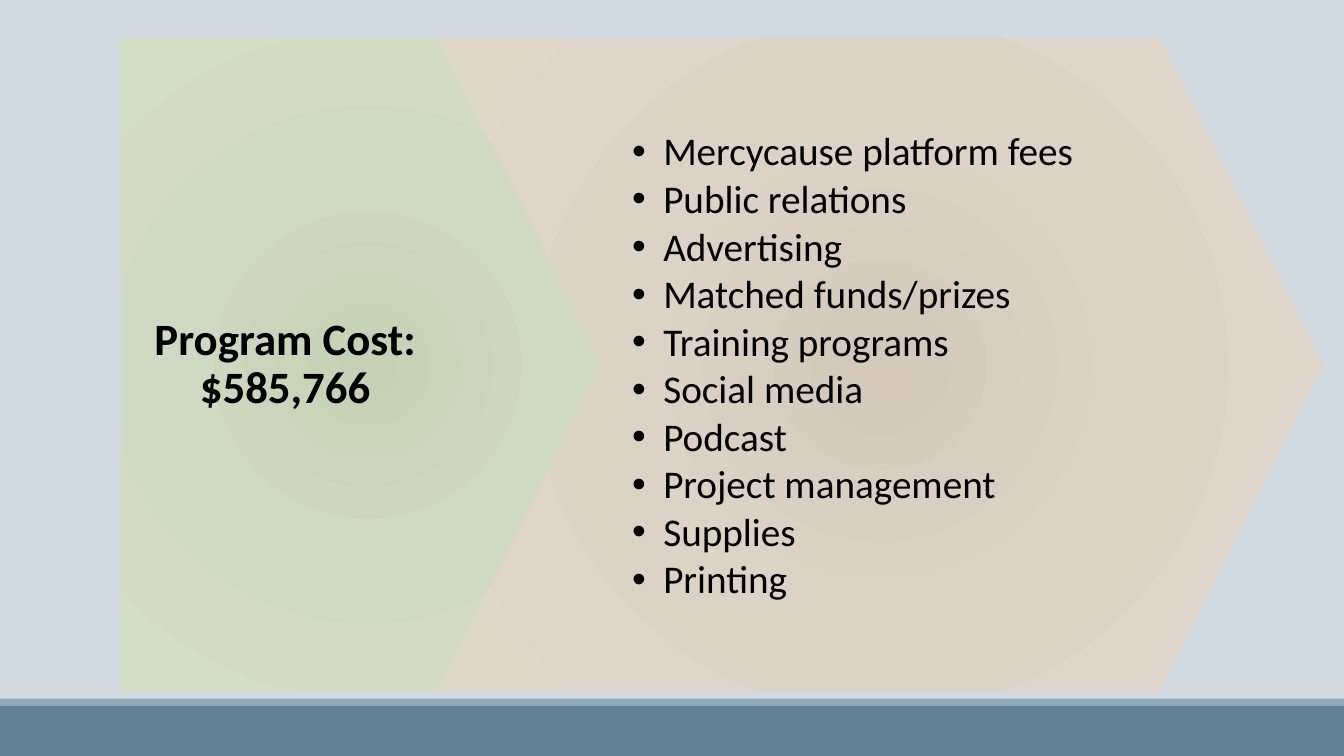
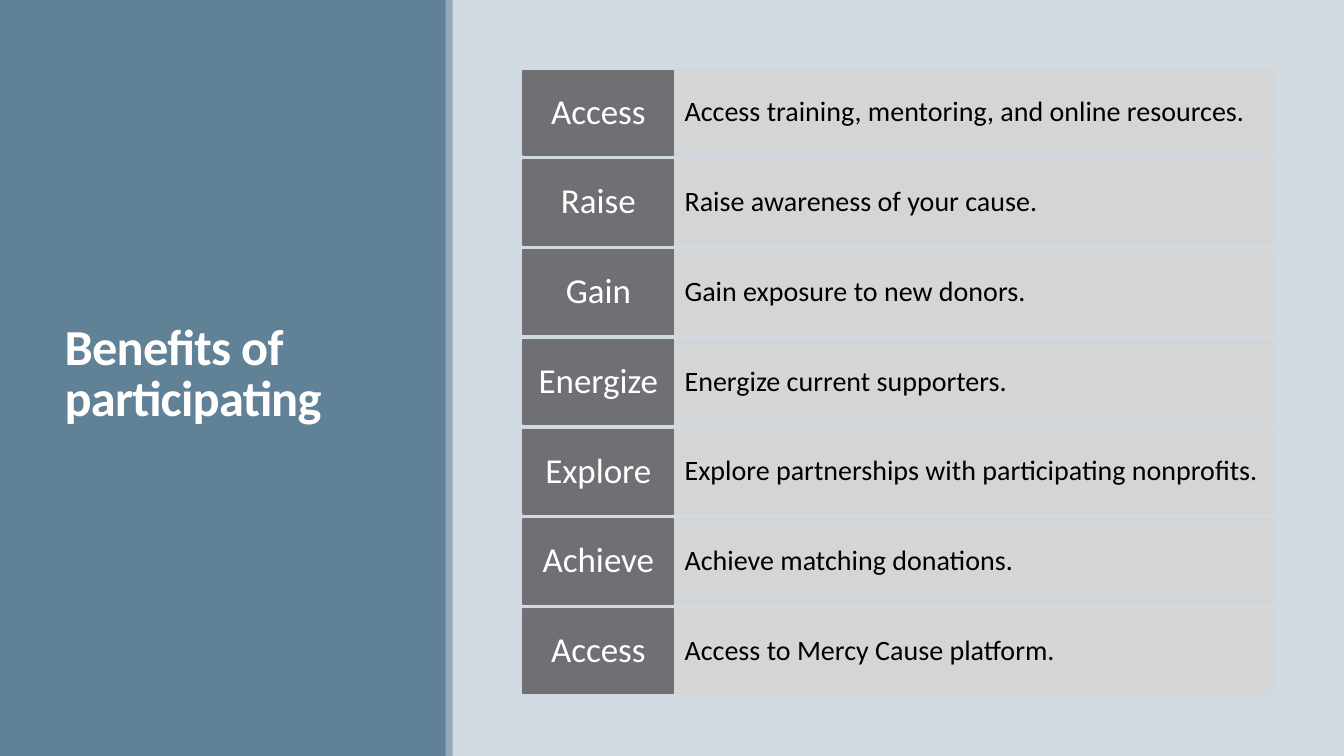
import pptx
import pptx.dml.color
import pptx.enum.shapes
import pptx.enum.text
import pptx.oxml
import pptx.oxml.ns
import pptx.util
from lxml import etree

Pt = pptx.util.Pt
Inches = pptx.util.Inches
RGBColor = pptx.dml.color.RGBColor
Shape = pptx.enum.shapes.MSO_SHAPE
Align = pptx.enum.text.PP_ALIGN
Anchor = pptx.enum.text.MSO_ANCHOR
qn = pptx.oxml.ns.qn

FONT = "Calibri"
PALE_BLUE = RGBColor(0xD1, 0xD9, 0xE1)
STEEL_BLUE = RGBColor(0x61, 0x81, 0x97)
MID_BLUE = RGBColor(0x92, 0xA9, 0xB9)
DARK_GRAY = RGBColor(0x6F, 0x6F, 0x74)
LIGHT_GRAY = RGBColor(0xD5, 0xD5, 0xD6)
BLACK = RGBColor(0, 0, 0)
WHITE = RGBColor(0xFF, 0xFF, 0xFF)
GREENS = (RGBColor(0xC5, 0xD0, 0xB4), RGBColor(0xD0, 0xD9, 0xC1), RGBColor(0xD5, 0xDF, 0xC6))
TANS = (RGBColor(0xD3, 0xC8, 0xBA), RGBColor(0xDC, 0xD3, 0xC7), RGBColor(0xE1, 0xD8, 0xCC))

presentation = pptx.Presentation()
presentation.slide_width = Inches(13.33)
presentation.slide_height = Inches(7.5)
presentation.slide_master.background.fill.solid()
presentation.slide_master.background.fill.fore_color.rgb = PALE_BLUE


def add_box(slide, kind, area, color, outlined=False):
    """Add a flat shape; area is left, top, width, height in percent of the slide."""
    sides = (presentation.slide_width, presentation.slide_height) * 2
    shape = slide.shapes.add_shape(
        kind, *(int(side * share / 100) for side, share in zip(sides, area)))
    shape.shadow.inherit = False
    shape.fill.solid()
    shape.fill.fore_color.rgb = color
    if outlined:
        shape.line.color.rgb = color
        shape.line.width = Pt(1.25)
    else:
        shape.line.fill.background()
    return shape


def write(shape, lines, size, color, align=Align.LEFT, anchor=Anchor.MIDDLE,
          bold=False, insets=(0.1, 0.05), spacing=0.9, area=None):
    """Fill a shape with one paragraph a line, moving it first if an area is given."""
    if area:
        sides = (presentation.slide_width, presentation.slide_height) * 2
        shape.left, shape.top, shape.width, shape.height = (
            int(side * share / 100) for side, share in zip(sides, area))
    frame = shape.text_frame
    frame.word_wrap = True
    frame.auto_size = pptx.enum.text.MSO_AUTO_SIZE.NONE
    frame.vertical_anchor = anchor
    frame.margin_left = frame.margin_right = Inches(insets[0])
    frame.margin_top = frame.margin_bottom = Inches(insets[1])
    for index, line in enumerate(lines):
        paragraph = frame.add_paragraph() if index else frame.paragraphs[0]
        paragraph.alignment = align
        paragraph.line_spacing = spacing
        paragraph.space_before = Pt(0)
        run = paragraph.add_run()
        run.text = line
        run.font.name = FONT
        run.font.size = Pt(size)
        run.font.bold = bold
        run.font.color.rgb = color
    return frame


# Program cost
slide = presentation.slides.add_slide(presentation.slide_layouts[1])
add_box(slide, Shape.RECTANGLE, (0, 92.4, 100, 0.93), MID_BLUE)
add_box(slide, Shape.RECTANGLE, (0, 93.33, 100, 6.67), STEEL_BLUE)

for kind, left, width, colors in ((Shape.PENTAGON, 9, 36.76, GREENS),
                                  (Shape.CHEVRON, 32.56, 65.87, TANS)):
    arrow = add_box(slide, kind, (left, 5.07, width, 86.4), colors[0])
    arrow.adjustments[0] = 0.25
    stops = "".join(f'<a:gs pos="{position}"><a:srgbClr val="{color}"/></a:gs>'
                    for position, color in zip((0, 45000, 100000), colors))
    gradient = pptx.oxml.parse_xml(
        f'<a:gradFill {pptx.oxml.ns.nsdecls("a")}><a:gsLst>{stops}</a:gsLst>'
        '<a:path path="circle"><a:fillToRect l="100000" t="100000" r="100000" b="100000"/>'
        '</a:path></a:gradFill>')
    properties = arrow.element.spPr
    properties.replace(properties.find(qn("a:solidFill")), gradient)

title, body = slide.placeholders
write(title, ["Program Cost: $585,766"], 32, BLACK, Align.CENTER, bold=True,
      insets=(0, 0.09), area=(10.95, 5.07, 20.55, 86.4))
costs = ["Mercycause platform fees", "Public relations", "Advertising",
         "Matched funds/prizes", "Training programs", "Social media", "Podcast",
         "Project management", "Supplies", "Printing"]
frame = write(body, costs, 28, BLACK, anchor=Anchor.TOP, insets=(0.31, 0.03),
              area=(44.7, 17.07, 41.56, 65))
for paragraph in frame.paragraphs:
    paragraph.space_after = Pt(3.7)
    properties = paragraph._p.get_or_add_pPr()
    properties.set("marL", str(Inches(0.31)))
    properties.set("indent", str(-Inches(0.31)))
    etree.SubElement(properties, qn("a:buChar"), char="•")
for placeholder in (title, body):
    # Bring the text in front of the arrows
    placeholder.element.getparent().append(placeholder.element)

# Benefits
slide = presentation.slides.add_slide(presentation.slide_layouts[5])
add_box(slide, Shape.RECTANGLE, (0, 0, 33.2, 100), STEEL_BLUE)
add_box(slide, Shape.RECTANGLE, (33.15, 0, 0.53, 100), MID_BLUE)
title = slide.shapes.title
frame = write(title, ["Benefits of participating"], 36, WHITE, bold=True, spacing=0.85,
              area=(4.05, 7.6, 25.28, 84.13))
frame.paragraphs[0].runs[0]._r.get_or_add_rPr().set("spc", "-50")
title.element.getparent().append(title.element)

benefits = [
    ("Access", "Access training, mentoring, and online resources."),
    ("Raise", "Raise awareness of your cause."),
    ("Gain", "Gain exposure to new donors."),
    ("Energize", "Energize current supporters."),
    ("Explore", "Explore partnerships with participating nonprofits."),
    ("Achieve", "Achieve matching donations."),
    ("Access", "Access to Mercy Cause platform."),
]
for row, (label, description) in enumerate(benefits):
    top = 9.33 + 11.87 * row
    bar = add_box(slide, Shape.RECTANGLE, (50.04, top, 44.64, 11.2), LIGHT_GRAY, True)
    for color in bar.element.spPr.iter(qn("a:srgbClr")):
        etree.SubElement(color, qn("a:alpha"), val="90000")
    write(bar, [description], 20, BLACK, insets=(0.12, 0.21))
    tile = add_box(slide, Shape.RECTANGLE, (38.93, top, 11.18, 11.2), DARK_GRAY, True)
    write(tile, [label], 25, WHITE, Align.CENTER, insets=(0.08, 0.08))

presentation.save("out.pptx")
